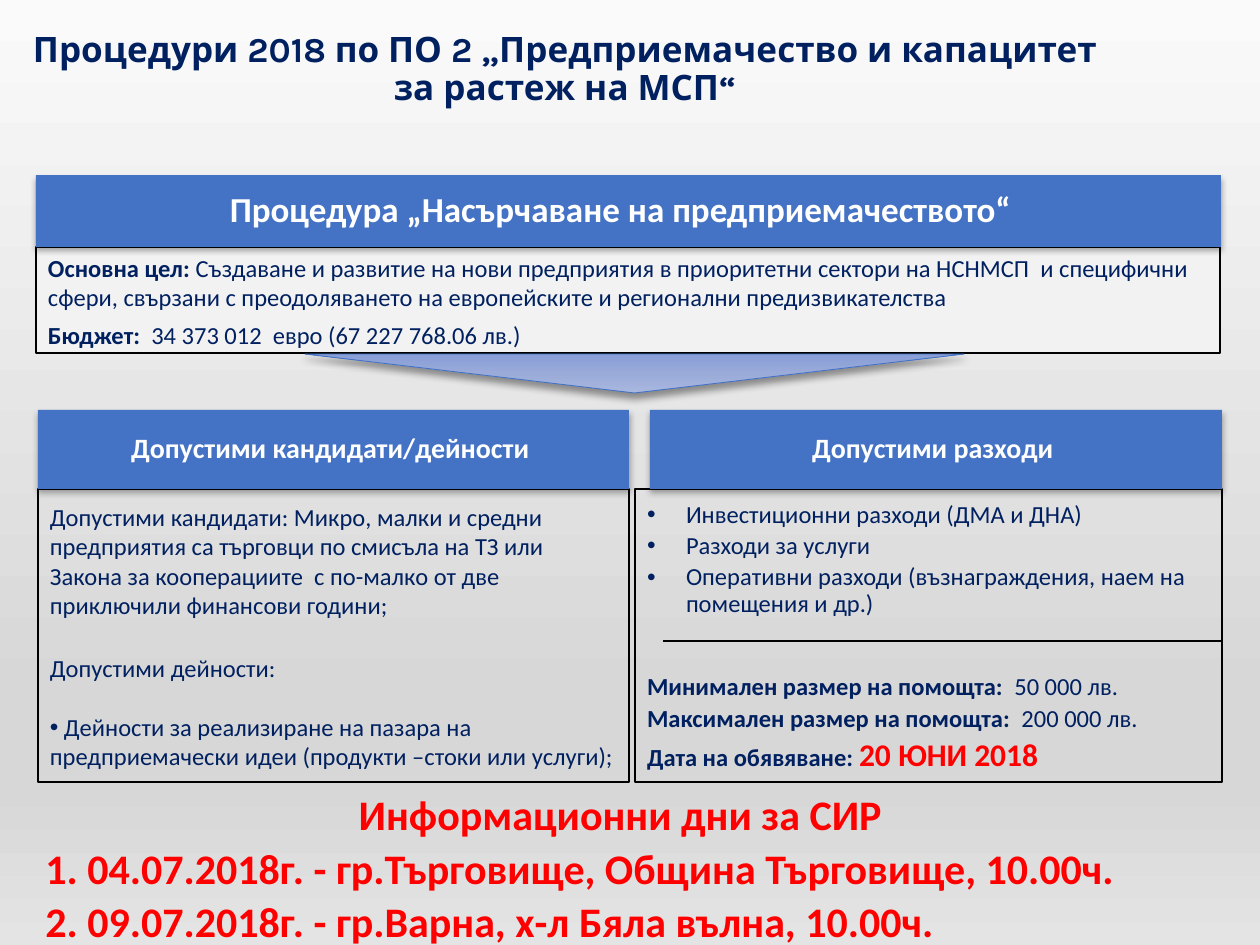
from lxml import etree
from pptx import Presentation
from pptx.dml.color import RGBColor
from pptx.enum.shapes import MSO_CONNECTOR, MSO_SHAPE
from pptx.enum.text import MSO_ANCHOR, MSO_AUTO_SIZE, PP_ALIGN
from pptx.oxml.ns import qn
from pptx.util import Pt

PX = 914400 / 126  # EMU per px
NAVY = RGBColor(0x00, 0x20, 0x60)
BLUE = RGBColor(0x44, 0x72, 0xC4)
RED = RGBColor(0xFF, 0x00, 0x00)
WHITE = RGBColor(0xFF, 0xFF, 0xFF)
BLACK = RGBColor(0x00, 0x00, 0x00)
PALE = RGBColor(0xF2, 0xF2, 0xF2)
RECT, TRIANGLE = MSO_SHAPE.RECTANGLE, MSO_SHAPE.ISOSCELES_TRIANGLE
TOP, MIDDLE = MSO_ANCHOR.TOP, MSO_ANCHOR.MIDDLE
LEFT, CENTER = PP_ALIGN.LEFT, PP_ALIGN.CENTER


def emu(*px):
    return [round(v * PX) for v in px]


def write(tf, paras, **base):
    """Each paragraph is (runs, format); each run is (text, font format)."""
    tf.word_wrap = True
    for i, (runs, fmt) in enumerate(paras):
        p = tf.paragraphs[0] if i == 0 else tf.add_paragraph()
        fmt = dict(fmt)
        bullet, hang = fmt.pop("bullet", False), fmt.pop("hang", 0)
        pPr = p._p.get_or_add_pPr()
        if bullet:
            indent = emu(hang)[0]
            pPr.set("marL", str(indent))
            pPr.set("indent", str(-indent))
            etree.SubElement(pPr, qn("a:buFont")).set("typeface", "Arial")
            etree.SubElement(pPr, qn("a:buChar")).set("char", "•")
        for name, value in {"alignment": LEFT, **fmt}.items():
            setattr(p, name, value)
        for text, font in runs:
            r = p.add_run()
            r.text = text
            values = {"name": "Calibri", "bold": False, **base, **font}
            r.font.color.rgb = values.pop("color")
            for name, value in values.items():
                setattr(r.font, name, value)


prs = Presentation()
prs.slide_width, prs.slide_height = emu(1260, 945)
s = prs.slides.add_slide(prs.slide_layouts[5])
B = {"bold": True}

# Title
title = s.shapes.title
title.left, title.top, title.width, title.height = emu(18, 26, 1094, 149)
tf = title.text_frame
tf.auto_size, tf.vertical_anchor = MSO_AUTO_SIZE.NONE, TOP
write(tf, [([("Процедури 2018 по ПО 2 „Предприемачество и капацитет за растеж на МСП“", {})],
            {"alignment": CENTER, "line_spacing": 0.9})],
      name="Karla", size=Pt(20), bold=True, color=NAVY)

# Framed text boxes
tight = {"line_spacing": 0.9}
item = {**tight, "space_before": Pt(2.8)}
listed = {**item, "bullet": True, "hang": 39}
goal = [
    ([("Основна цел: ", B),
      ("Създаване и развитие на нови предприятия в приоритетни сектори на НСНМСП  и специфични  "
       "сфери, свързани с преодоляването на европейските и регионални предизвикателства", {})], {}),
    ([("Бюджет:  ", B), ("34 373 012  евро (67 227 768.06 лв.)", {})], {"space_before": Pt(4.9)}),
]
candidates = [
    ([("Допустими кандидати: Микро, малки и средни предприятия са търговци по смисъла на ТЗ или "
       "Закона за кооперациите  с по-малко от две приключили финансови години;", {})], {}),
    ([("Допустими дейности:", {})], {**tight, "space_before": Pt(21)}),
    ([(" Дейности за реализиране на пазара на предприемачески идеи (продукти –стоки или услуги);", {})],
     {"bullet": True, "space_before": Pt(16.5)}),
]
costs = [
    ([("Инвестиционни разходи (ДМА и ДНА)", {})], {**listed, "space_before": Pt(0)}),
    ([("Разходи за услуги", {})], listed),
    ([("Оперативни разходи (възнаграждения, наем на помещения и др.)", {})], listed),
    ([("Минимален размер на помощта: ", B), (" 50 000 лв.", {})], {**tight, "space_before": Pt(32.5)}),
    ([("Максимален размер на помощта: ", B), (" 200 000 лв.", {})], item),
    ([("Дата на обявяване: ", B), ("20 ЮНИ 2018", {"bold": True, "size": Pt(18), "color": RED})],
     {**tight, "space_before": Pt(3.6)}),
]
for box, fill, inset, paras in [
    ((36, 247, 1184, 106), PALE, 6, goal),
    ((38, 489, 591, 293), None, 13, candidates),
    ((635, 489, 587, 293), None, 13, costs),
]:
    sp = s.shapes.add_shape(RECT, *emu(*box))
    sp.shadow.inherit = False
    if fill is None:
        sp.fill.background()
    else:
        sp.fill.solid()
        sp.fill.fore_color.rgb = fill
    sp.line.color.rgb, sp.line.width = BLACK, Pt(1)
    tf = sp.text_frame
    tf.vertical_anchor = TOP
    tf.margin_left, tf.margin_right, tf.margin_top, tf.margin_bottom = emu(12, 12, inset, inset)
    write(tf, paras, size=Pt(14), color=NAVY)

# Blue header bars
shadowed = []  # shape, opacity %, blur pt, distance pt
for box, size, text in [
    ((36, 175, 1185, 72), 20, "Процедура „Насърчаване на предприемачеството“  "),
    ((38, 410, 591, 79), 16, "Допустими кандидати/дейности "),
    ((650, 410, 572, 79), 16, "Допустими разходи "),
]:
    sp = s.shapes.add_shape(RECT, *emu(*box))
    sp.fill.solid()
    sp.fill.fore_color.rgb = BLUE
    sp.line.fill.background()
    tf = sp.text_frame
    tf.vertical_anchor = MIDDLE
    write(tf, [([(text, {})], {**tight, "alignment": CENTER})], size=Pt(size), bold=True, color=WHITE)
    shadowed.append((sp, 32, 3.5, 2.2))

# Divider in the costs box
line = s.shapes.add_connector(MSO_CONNECTOR.STRAIGHT, *emu(663, 641, 1221, 641))
line.line.color.rgb, line.line.width = BLACK, Pt(0.75)
etree.SubElement(line._element.spPr, qn("a:effectLst"))

# Arrow pointing down
arrow = s.shapes.add_shape(TRIANGLE, *emu(305, 354, 659, 39))
arrow.rotation = 180
arrow.line.color.rgb, arrow.line.width = BLUE, Pt(0.5)
shadowed.append((arrow, 40, 4, 3))

# Gradients of the background and the arrow
for fill, root, stops in [
    (s.background.fill, s.element.cSld,
     [(0, "FAFAFA"), (74, "D7D7D7"), (83, "D7D7D7"), (100, "E4E4E4")]),
    (arrow.fill, arrow._element.spPr, [(0, "A8B7DF"), (50, "9AABD9"), (100, "889ED7")]),
]:
    fill.gradient()
    fill.gradient_angle = 270
    gs_list = next(root.iter(qn("a:gsLst")))
    for gs in list(gs_list):
        gs_list.remove(gs)
    for pos, color in stops:
        gs = etree.SubElement(gs_list, qn("a:gs"), pos=str(pos * 1000))
        etree.SubElement(gs, qn("a:srgbClr"), val=color)

# Soft shadows straight below
for sp, opacity, blur, dist in shadowed:
    sp.shadow.inherit = False
    effects = sp._element.spPr.find(qn("a:effectLst"))
    outer = etree.SubElement(effects, qn("a:outerShdw"), blurRad=str(Pt(blur)), dist=str(Pt(dist)),
                             dir="5400000", algn="ctr", rotWithShape="0")
    color = etree.SubElement(outer, qn("a:srgbClr"), val="000000")
    etree.SubElement(color, qn("a:alpha"), val=str(opacity * 1000))

# Information days
tf = s.shapes.add_textbox(*emu(33, 788, 1184, 170)).text_frame
day = {**tight, "space_before": Pt(4.8)}
write(tf, [
    ([("Информационни дни за СИР ", {})], {**tight, "alignment": CENTER}),
    ([("1. 04.07.2018г. - гр.Търговище, Община Търговище, 10.00ч.", {})], day),
    ([("2. 09.07.2018г. - гр.Варна, х-л Бяла вълна, 10.00ч.", {})], day),
], size=Pt(24), bold=True, color=RED)

prs.save("out.pptx")
